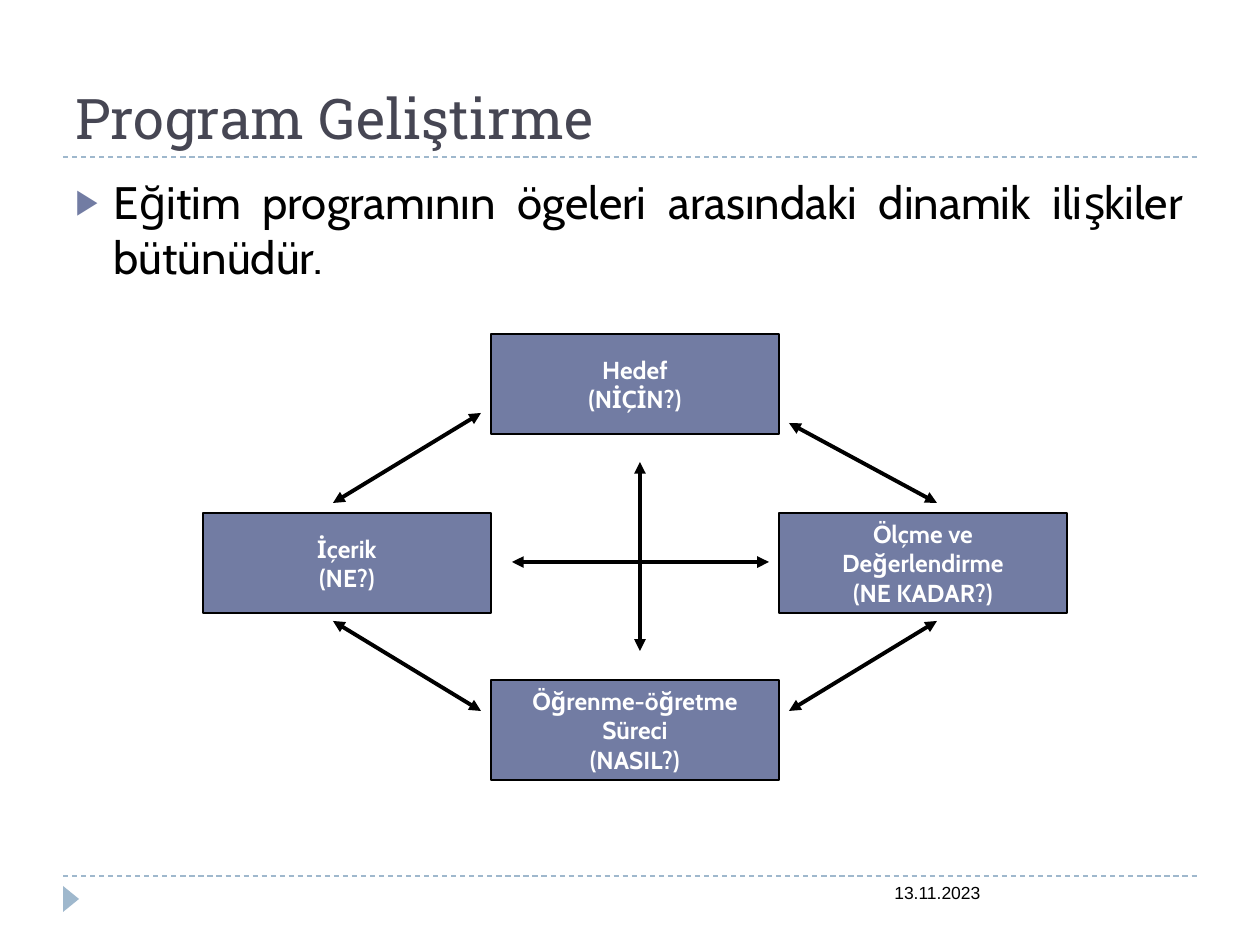
from lxml import etree
from pptx import Presentation
from pptx.dml.color import RGBColor
from pptx.enum.dml import MSO_LINE
from pptx.enum.shapes import MSO_CONNECTOR, MSO_SHAPE
from pptx.enum.text import MSO_ANCHOR, PP_ALIGN
from pptx.oxml.ns import qn
from pptx.util import Pt

BLACK = RGBColor(0x00, 0x00, 0x00)
WHITE = RGBColor(0xFF, 0xFF, 0xFF)
SLATE = RGBColor(0x46, 0x46, 0x53)
INDIGO = RGBColor(0x72, 0x7C, 0xA3)
SKY = RGBColor(0x9F, 0xB8, 0xCD)

LEFT, CENTER, JUSTIFY = PP_ALIGN.LEFT, PP_ALIGN.CENTER, PP_ALIGN.JUSTIFY
TOP, MIDDLE, BOTTOM = MSO_ANCHOR.TOP, MSO_ANCHOR.MIDDLE, MSO_ANCHOR.BOTTOM
RECT, TRIANGLE = MSO_SHAPE.RECTANGLE, MSO_SHAPE.ISOSCELES_TRIANGLE
STRAIGHT, DASH = MSO_CONNECTOR.STRAIGHT, MSO_LINE.DASH

WIDE, HIGH = 1260, 945
MARGIN, SPAN = 63, 1134
BOX_W, BOX_H = 288, 100
BOX_LEFT = 203
ROWS = (334, 513, 680)

BOXES = (
    (1, 0, "Hedef\n(NİÇİN?)"),
    (0, 1, "İçerik\n(NE?)"),
    (2, 1, "Ölçme ve\nDeğerlendirme\n(NE KADAR?)"),
    (1, 2, "Öğrenme-öğretme\nSüreci\n(NASIL?)"),
)
ARROWS = (
    (640, 462, 640, 651),
    (512, 562, 769, 562),
    (333, 503, 481, 413),
    (789, 711, 937, 621),
    (789, 423, 937, 503),
    (333, 621, 481, 711),
)


def px(count):
    return round(count * 914400 / 126)


def write(frame, text, *, font, size, color, bold=False, align=LEFT,
          anchor=TOP, wrap=True, before=0):
    """Fill the frame with one paragraph for each line of text."""
    frame.word_wrap = wrap
    frame.vertical_anchor = anchor
    frame.text = text
    for para in frame.paragraphs:
        para.alignment = align
        para.space_before = Pt(before)
        style = para.font
        style.name, style.size, style.bold = font, Pt(size), bold
        style.color.rgb = color


def add_bullet(para, mark, color, scale, indent):
    props = para._p.get_or_add_pPr()
    props.set("marL", str(indent))
    props.set("indent", str(-indent))
    tint = etree.Element(qn("a:buClr"))
    etree.SubElement(tint, qn("a:srgbClr"), val=str(color))
    items = (
        tint,
        etree.Element(qn("a:buSzPct"), val=str(scale * 1000)),
        etree.Element(qn("a:buFont"), typeface="Arial"),
        etree.Element(qn("a:buChar"), char=mark),
    )
    spot = props.find(qn("a:defRPr"))
    for item in items:
        if spot is None:
            props.append(item)
        else:
            spot.addprevious(item)


class Sheet:
    head_font = "Roboto Slab"
    body_font = "Cabin"
    date_font = "Arial"

    def __init__(self, slide):
        self.shapes = slide.shapes

    def text(self, x, y, w, h, words, **style):
        frame = self.shapes.add_textbox(px(x), px(y), px(w), px(h)).text_frame
        write(frame, words, **style)
        return frame

    def shape(self, kind, x, y, w, h, fill, edge=None):
        shape = self.shapes.add_shape(kind, px(x), px(y), px(w), px(h))
        shape.shadow.inherit = False
        shape.fill.solid()
        shape.fill.fore_color.rgb = fill
        if edge is None:
            shape.line.fill.background()
        else:
            shape.line.color.rgb = edge
            shape.line.width = Pt(0.75)
        return shape

    def box(self, x, y, words):
        shape = self.shape(RECT, x, y, BOX_W, BOX_H, INDIGO, BLACK)
        write(shape.text_frame, words, font=self.body_font, size=14,
              color=WHITE, bold=True, align=CENTER, anchor=MIDDLE, wrap=False)

    def line(self, x1, y1, x2, y2, color, width):
        link = self.shapes.add_connector(
            STRAIGHT, px(x1), px(y1), px(x2), px(y2))
        link.line.color.rgb = color
        link.line.width = Pt(width)
        etree.SubElement(link._element.spPr, qn("a:effectLst"))
        return link

    def rule(self, y):
        link = self.line(MARGIN, y, MARGIN + SPAN, y, SKY, 0.75)
        link.line.dash_style = DASH

    def arrow(self, x1, y1, x2, y2):
        """Draw a line with a head at both ends."""
        link = self.line(x1, y1, x2, y2, BLACK, 2.25)
        stroke = link.line._get_or_add_ln()
        for end in ("a:headEnd", "a:tailEnd"):
            etree.SubElement(stroke, qn(end), type="triangle")


def main():
    deck = Presentation()
    deck.slide_width, deck.slide_height = px(WIDE), px(HIGH)
    sheet = Sheet(deck.slides.add_slide(deck.slide_layouts[6]))

    for y in (876, 157):
        sheet.rule(y)
    sheet.shape(TRIANGLE, 58, 891, 26, 16, SKY).rotation = 90

    sheet.text(882, 876, 315, 50, "13.11.2023",
               font=sheet.date_font, size=10, color=BLACK)
    sheet.text(MARGIN, 21, SPAN, 136, "Program Geliştirme",
               font=sheet.head_font, size=32, color=SLATE, anchor=BOTTOM)
    body = sheet.text(
        MARGIN, 168, SPAN, 680,
        "Eğitim programının ögeleri arasındaki dinamik ilişkiler bütünüdür.",
        font=sheet.body_font, size=26, color=BLACK, align=JUSTIFY, before=6)
    add_bullet(body.paragraphs[0], "▶", INDIGO, 76, px(38))

    for col, row, words in BOXES:
        sheet.box(BOX_LEFT + col * BOX_W, ROWS[row], words)
    for ends in ARROWS:
        sheet.arrow(*ends)

    deck.save("out.pptx")


if __name__ == "__main__":
    main()
